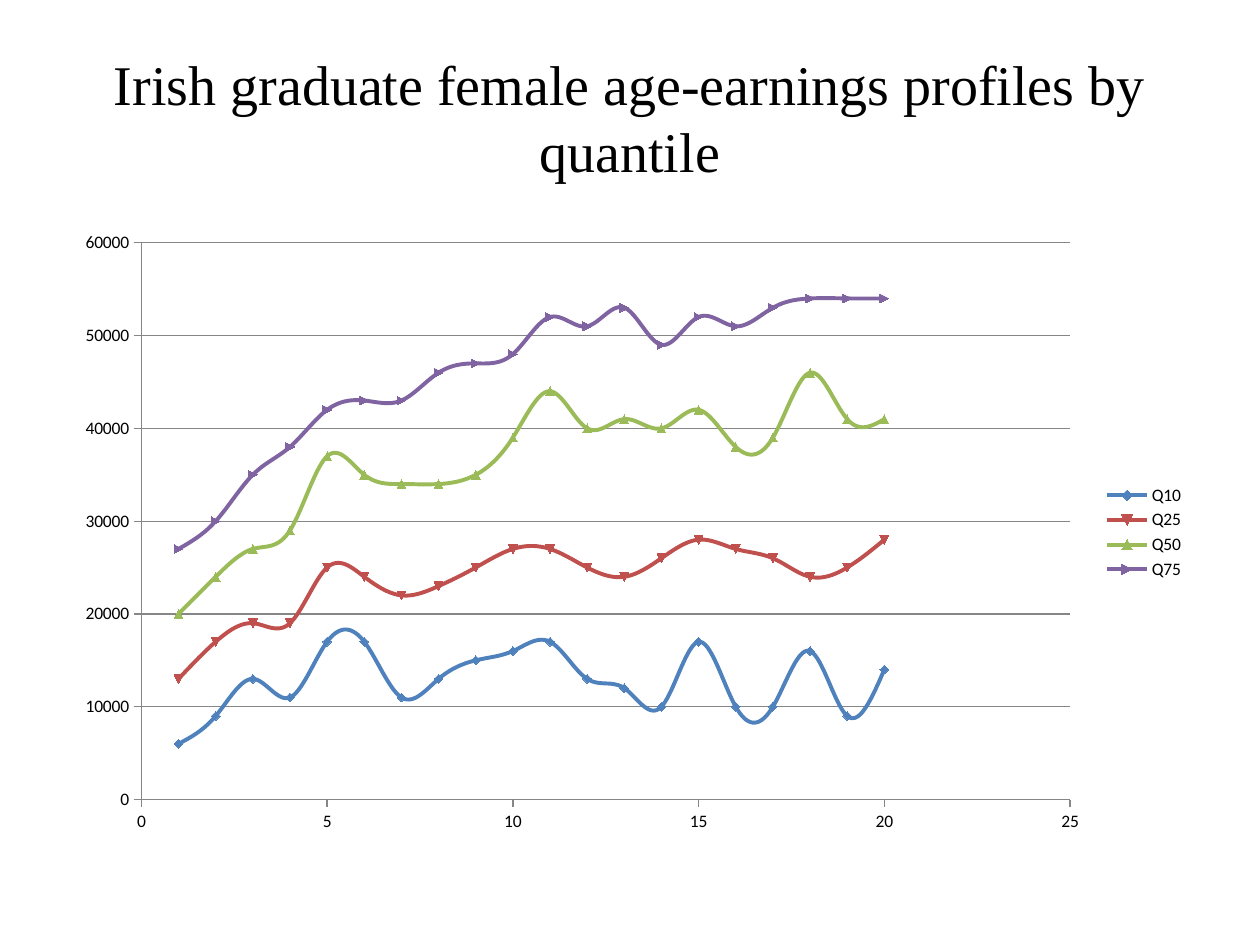
from pptx import Presentation
from pptx.chart.data import XyChartData
from pptx.dml.color import RGBColor
from pptx.enum.chart import XL_CHART_TYPE, XL_LEGEND_POSITION, XL_TICK_MARK
from pptx.enum.text import MSO_ANCHOR, PP_ALIGN
from pptx.util import Inches, Pt

SMOOTH_SCATTER = XL_CHART_TYPE.XY_SCATTER_SMOOTH
LEGEND_RIGHT = XL_LEGEND_POSITION.RIGHT
TICK_OUTSIDE = XL_TICK_MARK.OUTSIDE
MIDDLE = MSO_ANCHOR.MIDDLE
CENTER = PP_ALIGN.CENTER

BLACK = RGBColor(0x00, 0x00, 0x00)
GRAY = RGBColor(0x86, 0x86, 0x86)
BLUE = RGBColor(0x4F, 0x81, 0xBD)
RED = RGBColor(0xC0, 0x50, 0x4D)
GREEN = RGBColor(0x9B, 0xBB, 0x59)
PURPLE = RGBColor(0x80, 0x64, 0xA2)

# Content: earnings in thousands, one value for each year from 1
TITLE = "Irish graduate female age-earnings profiles by quantile"
QUANTILES = [
    ("Q10", BLUE, [6, 9, 13, 11, 17, 17, 11, 13, 15, 16,
                   17, 13, 12, 10, 17, 10, 10, 16, 9, 14]),
    ("Q25", RED, [13, 17, 19, 19, 25, 24, 22, 23, 25, 27,
                  27, 25, 24, 26, 28, 27, 26, 24, 25, 28]),
    ("Q50", GREEN, [20, 24, 27, 29, 37, 35, 34, 34, 35, 39,
                    44, 40, 41, 40, 42, 38, 39, 46, 41, 41]),
    ("Q75", PURPLE, [27, 30, 35, 38, 42, 43, 43, 46, 47, 48,
                     52, 51, 53, 49, 52, 51, 53, 54, 54, 54]),
]

presentation = Presentation()
presentation.slide_width = Inches(10)
presentation.slide_height = Inches(7.5)
slide = presentation.slides.add_slide(presentation.slide_layouts[6])

# Title
title_box = slide.shapes.add_textbox(Inches(0.5), Inches(0.3), Inches(9), Inches(1.25))
title_frame = title_box.text_frame
title_frame.word_wrap = True
title_frame.vertical_anchor = MIDDLE
paragraph = title_frame.paragraphs[0]
paragraph.alignment = CENTER
run = paragraph.add_run()
run.text = TITLE
run.font.name = "Times New Roman"
run.font.size = Pt(32)
run.font.color.rgb = BLACK

# Chart
chart_data = XyChartData(number_format="General")
for name, _, earnings in QUANTILES:
    series_data = chart_data.add_series(name)
    for year, thousands in enumerate(earnings, start=1):
        series_data.add_data_point(year, thousands * 1000)
chart = slide.shapes.add_chart(
    SMOOTH_SCATTER, Inches(0.5), Inches(1.75), Inches(9), Inches(4.95), chart_data
).chart
chart.has_title = False
chart.font.name = "Calibri"
chart.font.size = Pt(10)
chart.font.color.rgb = BLACK
chart.has_legend = True
chart.legend.position = LEGEND_RIGHT
chart.legend.include_in_layout = False

# Axes
for axis, maximum, step in ((chart.category_axis, 25, 5), (chart.value_axis, 60000, 10000)):
    axis.minimum_scale = 0
    axis.maximum_scale = maximum
    axis.major_unit = step
    axis.major_tick_mark = TICK_OUTSIDE
    axis.format.line.color.rgb = GRAY
    axis.format.line.width = Pt(0.75)
chart.category_axis.has_major_gridlines = False
chart.value_axis.has_major_gridlines = True
gridline = chart.value_axis.major_gridlines.format.line
gridline.color.rgb = GRAY
gridline.width = Pt(0.75)

# Smooth coloured curves
for series, (_, color, _) in zip(chart.plots[0].series, QUANTILES):
    series.format.line.color.rgb = color
    series.format.line.width = Pt(2.25)
    series.marker.format.fill.solid()
    series.marker.format.fill.fore_color.rgb = color
    series.marker.format.line.color.rgb = color
    for smooth in series._element.xpath("c:smooth"):
        smooth.set("val", "1")

presentation.save("out.pptx")
